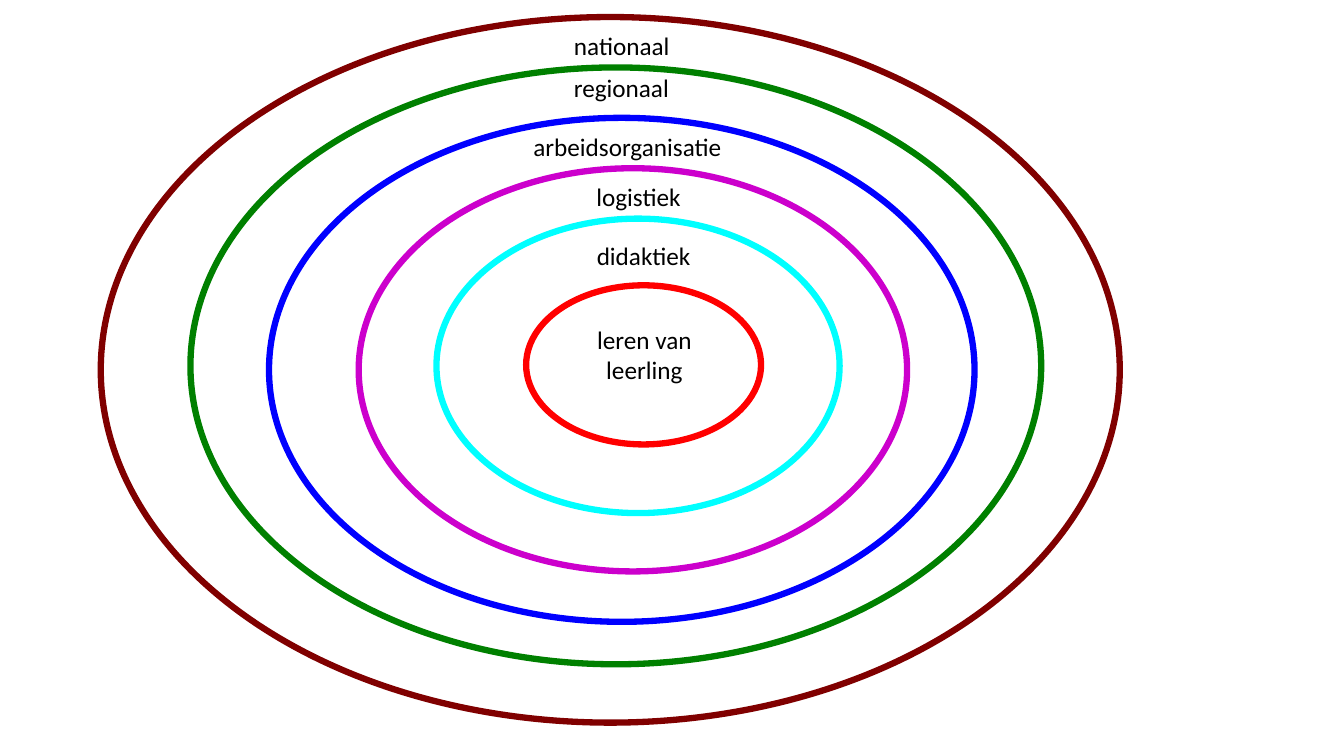
from dataclasses import dataclass

from pptx import Presentation
from pptx.dml.color import RGBColor
from pptx.enum.shapes import MSO_SHAPE
from pptx.enum.text import MSO_AUTO_SIZE, PP_ALIGN
from pptx.slide import Slide
from pptx.util import Cm, Pt


@dataclass(frozen=True)
class Theme:
    font: str = "Calibri"
    text_size: float = 18
    ring_width: float = 4.5
    text: str = "000000"
    learning: str = "FF0000"
    didactics: str = "00FFFF"
    logistics: str = "CC00CC"
    organisation: str = "0000FF"
    regional: str = "008000"
    national: str = "800000"


@dataclass(frozen=True)
class Box:
    """Position and size in centimetres."""
    left: float
    top: float
    width: float
    height: float

    def lengths(self) -> tuple[Cm, Cm, Cm, Cm]:
        return Cm(self.left), Cm(self.top), Cm(self.width), Cm(self.height)


@dataclass(frozen=True)
class Level:
    name: str
    color: str
    ring: Box
    label: Box


THEME = Theme()

# Levels from the centre outwards
LEVELS = [
    Level("leren van leerling", THEME.learning,
          Box(13.26, 7.19, 5.92, 4.01), Box(14.12, 8.05, 4.24, 1.8)),
    Level("didaktiek", THEME.didactics,
          Box(11, 5.51, 10.16, 7.42), Box(13.54, 5.92, 5.36, 1.02)),
    Level("logistiek", THEME.logistics,
          Box(9.04, 4.24, 13.82, 10.16), Box(12.7, 4.45, 6.78, 1.02)),
    Level("arbeidsorganisatie", THEME.organisation,
          Box(6.78, 2.97, 17.78, 12.7), Box(11.86, 3.18, 7.9, 1.02)),
    Level("regionaal", THEME.regional,
          Box(4.8, 1.7, 21.44, 15.04), Box(12.98, 1.7, 5.36, 1.02)),
    Level("nationaal", THEME.national,
          Box(2.54, 0.43, 25.68, 17.78), Box(12.42, 0.64, 6.5, 1.02)),
]


def add_ring(slide: Slide, level: Level) -> None:
    shape = slide.shapes.add_shape(MSO_SHAPE.OVAL, *level.ring.lengths())
    shape.shadow.inherit = False
    shape.fill.background()
    shape.line.color.rgb = RGBColor.from_string(level.color)
    shape.line.width = Pt(THEME.ring_width)


def add_label(slide: Slide, level: Level) -> None:
    text_frame = slide.shapes.add_textbox(*level.label.lengths()).text_frame
    text_frame.word_wrap = True
    text_frame.auto_size = MSO_AUTO_SIZE.SHAPE_TO_FIT_TEXT
    paragraph = text_frame.paragraphs[0]
    paragraph.alignment = PP_ALIGN.CENTER
    run = paragraph.add_run()
    run.text = level.name
    run.font.name = THEME.font
    run.font.size = Pt(THEME.text_size)
    run.font.color.rgb = RGBColor.from_string(THEME.text)


def main() -> None:
    presentation = Presentation()
    presentation.slide_width = Cm(33.87)
    presentation.slide_height = Cm(19.05)
    blank_layout = presentation.slide_layouts[6]
    slide = presentation.slides.add_slide(blank_layout)

    # Rings
    for level in LEVELS:
        add_ring(slide, level)

    # Labels, from the outside inwards
    for level in reversed(LEVELS):
        add_label(slide, level)

    presentation.save("out.pptx")


if __name__ == "__main__":
    main()
